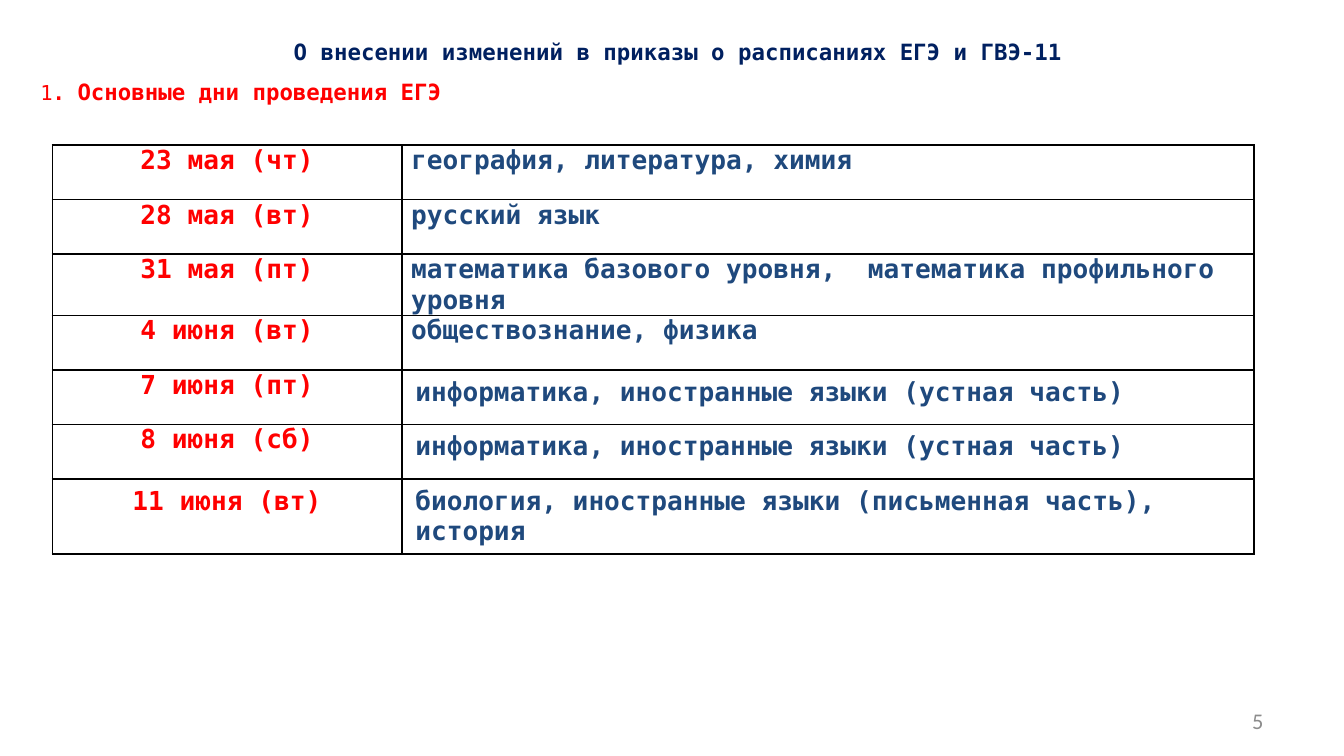
from lxml.etree import SubElement
from pptx import Presentation
from pptx.dml.color import RGBColor
from pptx.enum.text import MSO_ANCHOR as Anchor, MSO_AUTO_SIZE as AutoSize, PP_ALIGN as Align
from pptx.oxml import parse_xml
from pptx.oxml.ns import nsdecls, qn
from pptx.util import Inches, Pt

# Content
TITLE = "О внесении изменений в приказы о расписаниях ЕГЭ и ГВЭ-11"
HEADING = [("1", 11, False), (". ", 11, True), ("Основные дни проведения ЕГЭ", 12, True)]
PAGE = "5"
NARROW, NORMAL = (0.07, 0), (0.1, 0.05)  # cell insets: sides, top and bottom
EXAMS = [
    ("23 мая (чт)", NARROW, "география, литература, химия", NARROW),
    ("28 мая (вт)", NARROW, "русский язык", NARROW),
    ("31 мая (пт)", NARROW, "математика базового уровня,  математика профильного уровня", NARROW),
    ("4 июня (вт)", NARROW, "обществознание, физика", NARROW),
    ("7 июня (пт)", NARROW, "информатика, иностранные языки (устная часть)", NORMAL),
    ("8 июня (сб)", NARROW, "информатика, иностранные языки (устная часть)", NORMAL),
    ("11 июня (вт)", NORMAL, "биология, иностранные языки (письменная часть), история", NORMAL),
]

COLORS = {"title": "002060", "date": "FF0000", "subject": "1F497D",
          "border": "000000", "page": "8C8C8C"}
MONO = "DejaVu Sans Mono"
COLUMNS = (2.6, 6.34)
TABLE_HEIGHT = 2.84  # shared equally by the rows; two-line rows grow


def style(run, size, color, bold=False, font=MONO):
    run.font.name, run.font.size, run.font.bold = font, Pt(size), bold
    run.font.color.rgb = RGBColor.from_string(COLORS[color])


def place(shape, left, top, width, height, anchor=Anchor.TOP):
    shape.left, shape.top = Inches(left), Inches(top)
    shape.width, shape.height = Inches(width), Inches(height)
    frame = shape.text_frame
    frame.word_wrap, frame.auto_size, frame.vertical_anchor = True, AutoSize.NONE, anchor
    return frame


def fill_cell(cell, text, insets, color, align):
    cell.text_frame.text = text
    paragraph = cell.text_frame.paragraphs[0]
    paragraph.alignment = align
    style(paragraph.runs[0], 14, color, bold=True)
    cell.margin_left = cell.margin_right = Inches(insets[0])
    cell.margin_top = cell.margin_bottom = Inches(insets[1])
    cell.fill.background()
    properties = cell._tc.get_or_add_tcPr()
    for order, side in enumerate("LRTB"):
        properties.insert(order, parse_xml(
            f'<a:ln{side} {nsdecls("a")} w="{Pt(1)}"><a:solidFill>'
            f'<a:srgbClr val="{COLORS["border"]}"/></a:solidFill></a:ln{side}>'))


def main():
    deck = Presentation()
    deck.slide_width = Inches(10)
    deck.slide_height = deck.slide_width * 9 // 16
    slide = deck.slides.add_slide(deck.slide_layouts[1])

    # Title and section heading
    title = place(slide.shapes.title, 0.2, 0.13, 9.69, 0.4)
    title.text = TITLE
    title.paragraphs[0].alignment = Align.CENTER
    style(title.paragraphs[0].runs[0], 12, "title", bold=True)

    heading = place(slide.placeholders[1], 0.2, 0.43, 9.69, 0.4).paragraphs[0]
    heading.alignment = Align.LEFT
    for text, size, bold in HEADING:
        run = heading.add_run()
        run.text = text
        style(run, size, "date", bold)
    for paragraph in (title.paragraphs[0], heading):
        paragraph.line_spacing, paragraph.space_before = 1.5, Pt(0)
    indents = heading._p.get_or_add_pPr()
    indents.set("marL", "0")
    indents.set("indent", "0")
    SubElement(indents, qn("a:buNone"))

    # Exam timetable
    timetable = slide.shapes.add_table(
        len(EXAMS), len(COLUMNS), Inches(0.39), Inches(1.08),
        Inches(sum(COLUMNS)), Inches(TABLE_HEIGHT)).table
    timetable.first_row = timetable.horz_banding = False
    for column, width in zip(timetable.columns, COLUMNS):
        column.width = Inches(width)
    for row, (date, date_insets, subjects, subject_insets) in zip(timetable.rows, EXAMS):
        fill_cell(row.cells[0], date, date_insets, "date", Align.CENTER)
        fill_cell(row.cells[1], subjects, subject_insets, "subject", Align.LEFT)

    # Page number
    page_box = slide.shapes.add_textbox(0, 0, 0, 0)
    page = place(page_box, 7.17, 5.21, 2.33, 0.3, Anchor.MIDDLE)
    page.text = PAGE
    page.paragraphs[0].alignment = Align.RIGHT
    style(page.paragraphs[0].runs[0], 12, "page", font="Calibri")

    deck.save("out.pptx")


if __name__ == "__main__":
    main()
